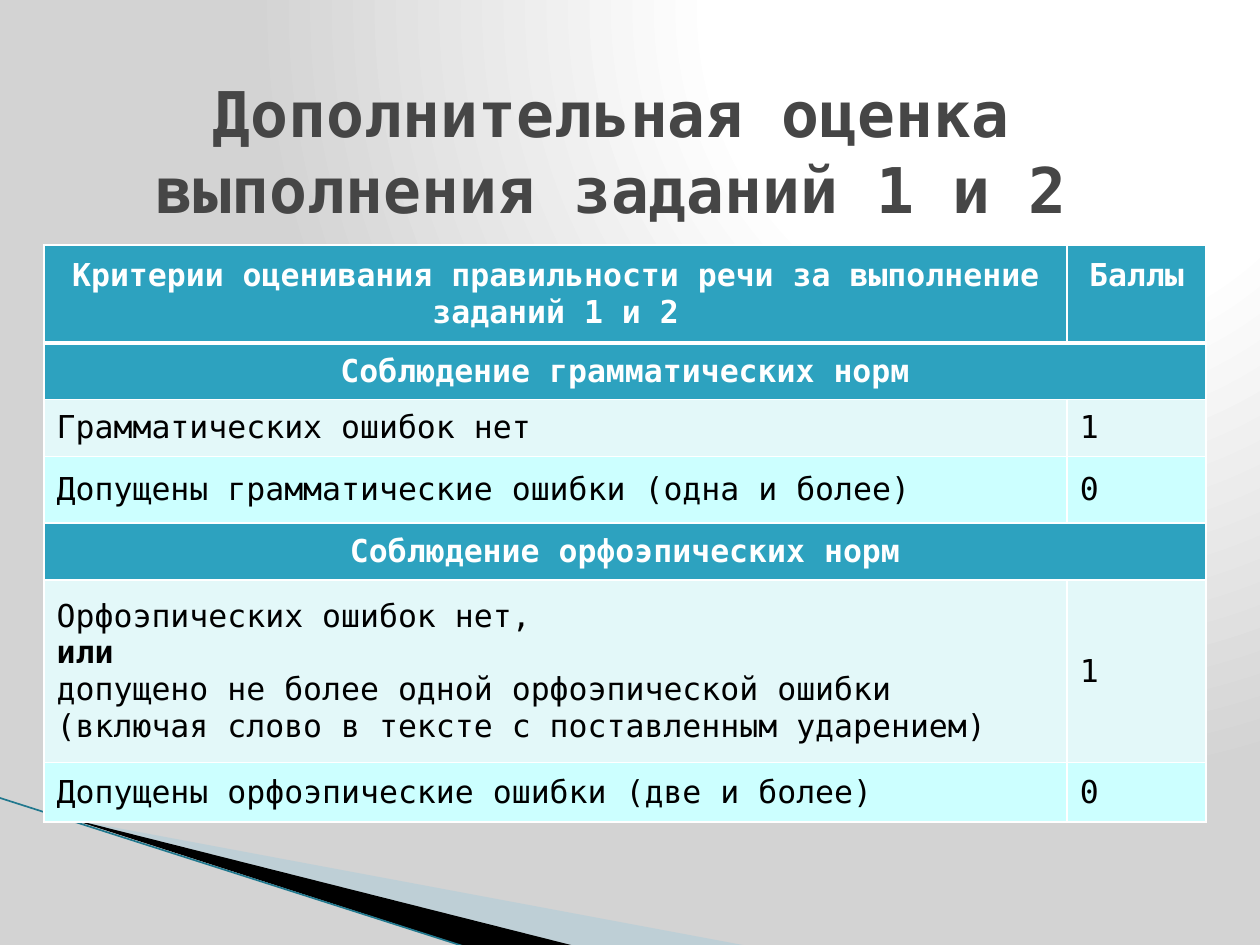
"""Builds a slide with the table of extra marks for tasks 1 and 2."""
from dataclasses import dataclass

from pptx import Presentation
from pptx import util as u
from pptx.dml.color import RGBColor
from pptx.enum import shapes, text
from pptx.oxml import parse_xml
from pptx.oxml.ns import nsdecls, qn


@dataclass(frozen=True)
class Theme:
    font: str = "DejaVu Sans Mono"
    title: str = "464646"
    head: str = "2DA2BF"
    good: str = "E3F8F9"
    bad: str = "CCFFFF"
    white: str = "FFFFFF"
    black: str = "000000"
    gray: str = "D3D3D3"
    wing: str = "A0CBDC"
    edge: str = "21788E"
    big: int = 36
    body: int = 18


THEME = Theme()
WIDE, HIGH = 10, 7.5
TITLE = "Дополнительная оценка выполнения заданий 1 и 2"
TITLE_BOX = (0.02, 0.059, 0.93, 0.2)
TABLE_AT = (0.035, 0.259)
COLS = (8.12, 1.1)
ROWS = [
    (0.78, "head", "Критерии оценивания правильности речи за выполнение заданий 1 и 2", "Баллы"),
    (0.45, "head", "Соблюдение грамматических норм", None),
    (0.45, "good", "Грамматических ошибок нет", "1"),
    (0.53, "bad", "Допущены грамматические ошибки (одна и более)", "0"),
    (0.45, "head", "Соблюдение орфоэпических норм", None),
    (1.45, "good", "Орфоэпических ошибок нет,\nили\nдопущено не более одной орфоэпической ошибки "
     "(включая слово в тексте с поставленным ударением)", "1"),
    (0.47, "bad", "Допущены орфоэпические ошибки (две и более)", "0"),
]
STRONG = "или"
WINGS = [
    (THEME.wing, 40, [(0.55, 6.5), (5.95, 7.51), (4.56, 7.51)]),
    (THEME.black, 100, [(0.53, 6.49), (4.57, 7.51), (3.72, 7.52)]),
]
EDGE = (-0.01, 6.33, 3.71, 7.52)


def tint(fill, hue):
    fill.solid()
    fill.fore_color.rgb = RGBColor.from_string(hue)


def style(para, size, hue, bold, center):
    para.alignment = text.PP_ALIGN.CENTER if center else text.PP_ALIGN.LEFT
    for run in para.runs:
        font = run.font
        font.name, font.size, font.bold = THEME.font, u.Pt(size), bold
        font.color.rgb = RGBColor.from_string(hue)


def add_back(slide):
    stops = "".join(
        f'<a:gs pos="{pos}000"><a:srgbClr val="{hue}"/></a:gs>'
        for pos, hue in ((0, THEME.white), (40, THEME.white), (100, THEME.gray)))
    slide.element.cSld.insert(0, parse_xml(
        f'<p:bg {nsdecls("p", "a")}><p:bgPr><a:gradFill><a:gsLst>{stops}</a:gsLst>'
        '<a:path path="circle"><a:fillToRect l="65000" t="0" r="0" b="98000"/></a:path>'
        '</a:gradFill><a:effectLst/></p:bgPr></p:bg>'))


def add_wings(slide):
    for hue, alpha, points in WINGS:
        start, *rest = [(u.Inches(x), u.Inches(y)) for x, y in points]
        build = slide.shapes.build_freeform(*start)
        build.add_line_segments(rest, close=True)
        wing = build.convert_to_shape()
        wing.shadow.inherit = False
        wing.line.fill.background()
        tint(wing.fill, hue)
        clear = parse_xml(f'<a:alpha {nsdecls("a")} val="{alpha * 1000}"/>')
        wing.element.spPr.find(qn("a:solidFill"))[0].append(clear)
    edge = slide.shapes.add_connector(
        shapes.MSO_CONNECTOR.STRAIGHT, *map(u.Inches, EDGE))
    edge.line.width = u.Pt(0.95)
    tint(edge.line.fill, THEME.edge)
    edge.element.spPr.append(parse_xml(f'<a:effectLst {nsdecls("a")}/>'))


def add_title(slide):
    title = slide.shapes.title
    left, top, wide, high = TITLE_BOX
    title.left, title.width = u.Inches(left * WIDE), u.Inches(wide * WIDE)
    title.top, title.height = u.Inches(top * HIGH), u.Inches(high * HIGH)
    frame = title.text_frame
    frame.text = TITLE
    frame.word_wrap = True
    frame.vertical_anchor = text.MSO_ANCHOR.MIDDLE
    style(frame.paragraphs[0], THEME.big, THEME.title, True, True)


def rule(cell, row):
    sides = {"L": 1, "R": 1, "T": 3 if row == 1 else 1, "B": 3 if row == 0 else 1}
    for side, width in sides.items():
        cell._tc.get_or_add_tcPr().append(parse_xml(
            f'<a:ln{side} {nsdecls("a")} w="{u.Pt(width)}"><a:solidFill>'
            f'<a:srgbClr val="{THEME.white}"/></a:solidFill></a:ln{side}>'))


def add_table(slide):
    left, top = TABLE_AT
    size = (sum(COLS), sum(row[0] for row in ROWS))
    table = slide.shapes.add_table(
        len(ROWS), len(COLS), u.Inches(left * WIDE), u.Inches(top * HIGH),
        *map(u.Inches, size)).table
    for col, wide in zip(table.columns, COLS):
        col.width = u.Inches(wide)
    for r, (high, kind, *words) in enumerate(ROWS):
        table.rows[r].height = u.Inches(high)
        head = kind == "head"
        if words[1] is None:
            table.cell(r, 0).merge(table.cell(r, 1))
        for c, word in enumerate(words):
            cell = table.cell(r, c)
            rule(cell, r)
            tint(cell.fill, getattr(THEME, kind))
            cell.vertical_anchor = text.MSO_ANCHOR.MIDDLE
            if word is None:
                continue
            cell.text_frame.text = word
            for para in cell.text_frame.paragraphs:
                style(para, THEME.body, THEME.white if head else THEME.black,
                      head or para.text == STRONG, head)
    points = table.cell(0, 1)
    points.vertical_anchor = text.MSO_ANCHOR.TOP
    points.margin_top = u.Inches(0.1)


def main():
    deck = Presentation()
    deck.slide_width, deck.slide_height = u.Inches(WIDE), u.Inches(HIGH)
    slide = deck.slides.add_slide(deck.slide_layouts[5])
    add_back(slide)
    add_wings(slide)
    add_title(slide)
    add_table(slide)
    deck.save("out.pptx")


if __name__ == "__main__":
    main()
